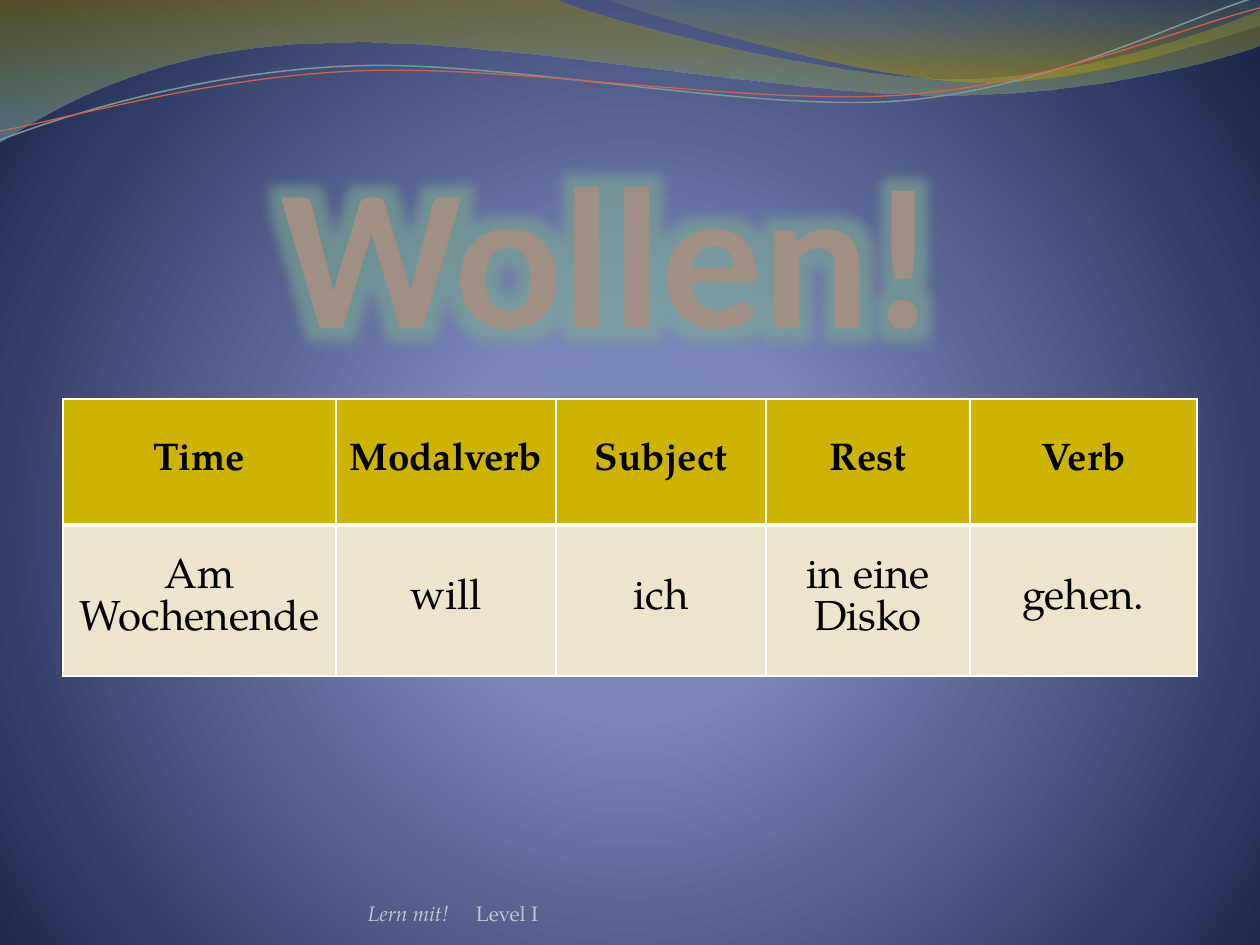
"""Build a German grammar slide on word order with the modal verb wollen."""
from dataclasses import dataclass

from lxml import etree
from pptx import Presentation
from pptx.dml.color import RGBColor
from pptx.enum.text import MSO_ANCHOR, MSO_AUTO_SIZE, PP_ALIGN
from pptx.oxml import parse_xml
from pptx.oxml.ns import nsdecls, qn
from pptx.util import Emu, Pt

CENTER, LEFT = PP_ALIGN.CENTER, PP_ALIGN.LEFT
BOTTOM, MIDDLE = MSO_ANCHOR.BOTTOM, MSO_ANCHOR.MIDDLE
NO_AUTOFIT = MSO_AUTO_SIZE.NONE
EMU_PER_PX = 914400 / 126
TITLE_ONLY = 5


@dataclass(frozen=True)
class Theme:
    """Colours, fonts and type sizes of the slide."""
    heading_font: str = "Calibri"
    body_font: str = "TeX Gyre Pagella"
    title: str = "9F8F85"
    glow: str = "7DAC92"
    footer: str = "BCC8CD"
    ink: str = "000000"
    rule: str = "FFFFFF"
    header_fill: str = "CCB400"
    body_fill: str = "ECE5CC"
    title_size: int = 115
    header_size: int = 22
    body_size: int = 24
    footer_size: int = 12


@dataclass(frozen=True)
class Stop:
    """One gradient stop, with position and opacity in percent."""
    position: int
    color: str
    opacity: int = 100


@dataclass(frozen=True)
class Wave:
    """An outline whose steps hold one point for a line or three for a curve."""
    start: tuple
    steps: tuple
    stops: tuple = ()
    line_color: str = ""
    line_width: float = 0


THEME = Theme()
LINEAR = '<a:lin ang="5400000" scaled="0"/>'
RADIAL = ('<a:path path="circle"><a:fillToRect l="10000" t="110000" '
          'r="10000" b="100000"/></a:path>')
BACKDROP = (Stop(0, "7A88C3"), Stop(25, "7A86B9"), Stop(100, "1B254B"))
WAVES = (
    Wave((0, 0), (
        ((554, -1),),
        ((600, 21), (837, 79), (955, 79)),
        ((1075, 79), (1207, 33), (1260, 11)),
        ((1261, 45),),
        ((1239, 55), (1096, 96), (940, 95)),
        ((784, 95), (481, 35), (324, 43)),
        ((163, 45), (58, 105), (-1, 142)),
    ), stops=(Stop(0, "978500", 45), Stop(100, "77A5A6", 55))),
    Wave((604, -1), (
        ((641, 14), (859, 78), (969, 82)),
        ((1079, 87), (1211, 40), (1260, 26)),
        ((1260, 0),),
    ), stops=(Stop(0, "648484", 30), Stop(80, "B49F00", 45))),
    Wave((0, 140), (
        ((60, 117), (199, 72), (349, 66)),
        ((498, 59), (747, 112), (898, 101)),
        ((1050, 89), (1182, 19), (1257, -3)),
    ), line_color="7C999A", line_width=0.85),
    Wave((0, 131), (
        ((59, 121), (207, 77), (357, 71)),
        ((508, 64), (752, 106), (903, 95)),
        ((1053, 84), (1186, 26), (1260, 8)),
    ), line_color="D16349", line_width=0.75),
)
COLUMN_WIDTHS = (273, 220, 210, 204, 227)
ROW_HEIGHTS = (126, 151)
SENTENCE = (
    ("Time", "Modalverb", "Subject", "Rest", "Verb"),
    ("Am Wochenende", "will", "ich", "in eine Disko", "gehen."),
)


def px(length: float) -> Emu:
    """Turn a length in px into EMU."""
    return Emu(round(length * EMU_PER_PX))


def fill_gradient(fill, element, stops: tuple, direction: str) -> None:
    """Give the fill found under element a gradient with opacity."""
    fill.gradient()
    default = next(element.iter(qn("a:gradFill")))
    marks = "".join(
        f'<a:gs pos="{stop.position * 1000}"><a:srgbClr val="{stop.color}">'
        f'<a:alpha val="{stop.opacity * 1000}"/></a:srgbClr></a:gs>'
        for stop in stops)
    gradient = parse_xml(f'<a:gradFill {nsdecls("a")} rotWithShape="1">'
                         f'<a:gsLst>{marks}</a:gsLst>{direction}</a:gradFill>')
    default.getparent().replace(default, gradient)


def bend_outline(shape, steps: tuple) -> None:
    """Join the line segments of each three-point step into one curve."""
    outline = next(shape.element.iter(qn("a:path")))
    segments = iter(outline.findall(qn("a:lnTo")))
    for step in steps:
        group = [next(segments) for _ in step]
        if len(group) == 3:
            curve = etree.Element(qn("a:cubicBezTo"))
            group[0].addprevious(curve)
            for segment in group:
                curve.append(segment[0])
                outline.remove(segment)


def draw_wave(slide, wave: Wave) -> None:
    """Draw a wave as a gradient area or as a thin line."""
    builder = slide.shapes.build_freeform(*map(px, wave.start))
    builder.add_line_segments(
        [(px(x), px(y)) for step in wave.steps for x, y in step], close=bool(wave.stops))
    shape = builder.convert_to_shape()
    bend_outline(shape, wave.steps)
    shape.shadow.inherit = False
    if wave.stops:
        fill_gradient(shape.fill, shape.element, wave.stops, LINEAR)
        shape.line.fill.background()
    else:
        shape.fill.background()
        shape.line.color.rgb = RGBColor.from_string(wave.line_color)
        shape.line.width = Pt(wave.line_width)


def add_span(para, text: str, *, size: int, color: str, font: str = THEME.body_font,
             bold: bool = False, italic: bool = False, align=LEFT):
    """Add formatted text to a paragraph and return its run."""
    para.alignment = align
    span = para.add_run()
    span.text = text
    span.font.name, span.font.size = font, Pt(size)
    span.font.bold, span.font.italic = bold, italic
    span.font.color.rgb = RGBColor.from_string(color)
    return span


def prepare_box(box, left: int, top: int, width: int, height: int):
    """Place a text shape without insets and return its first paragraph."""
    box.left, box.top, box.width, box.height = map(px, (left, top, width, height))
    frame = box.text_frame
    frame.word_wrap, frame.auto_size, frame.vertical_anchor = True, NO_AUTOFIT, BOTTOM
    frame.margin_left = frame.margin_right = frame.margin_top = frame.margin_bottom = 0
    return frame.paragraphs[0]


def add_glow(span, color: str, radius: int) -> None:
    """Put a soft glow around a run."""
    glow = parse_xml(
        f'<a:effectLst {nsdecls("a")}><a:glow rad="{px(radius)}"><a:srgbClr val="{color}">'
        '<a:alpha val="60000"/></a:srgbClr></a:glow></a:effectLst>')
    next(span._r.iter(qn("a:solidFill"))).addnext(glow)


def add_borders(cell, **widths: int) -> None:
    """Draw cell borders, given in points by side."""
    properties = cell._tc.get_or_add_tcPr()
    for side in "LRTB":
        line = etree.SubElement(properties, qn(f"a:ln{side}"), w=str(Pt(widths.get(side, 1))))
        fill = etree.SubElement(line, qn("a:solidFill"))
        etree.SubElement(fill, qn("a:srgbClr"), val=THEME.rule)


def draw_table(slide, left: int, top: int) -> None:
    """Draw the sentence table with its header row."""
    size = px(sum(COLUMN_WIDTHS)), px(sum(ROW_HEIGHTS))
    table = slide.shapes.add_table(len(ROW_HEIGHTS), len(COLUMN_WIDTHS),
                                   px(left), px(top), *size).table
    table.horz_banding = False
    for column, width in zip(table.columns, COLUMN_WIDTHS):
        column.width = px(width)
    for index, (row, height, words) in enumerate(zip(table.rows, ROW_HEIGHTS, SENTENCE)):
        row.height = px(height)
        header = index == 0
        for cell, word in zip(row.cells, words):
            add_borders(cell, **{"B" if header else "T": 3})
            cell.fill.solid()
            cell.fill.fore_color.rgb = RGBColor.from_string(
                THEME.header_fill if header else THEME.body_fill)
            cell.vertical_anchor = MIDDLE
            add_span(cell.text_frame.paragraphs[0], word, color=THEME.ink,
                     bold=header, align=CENTER,
                     size=THEME.header_size if header else THEME.body_size)


def main() -> None:
    """Build and save the deck."""
    deck = Presentation()
    deck.slide_width, deck.slide_height = px(1260), px(945)
    slide = deck.slides.add_slide(deck.slide_layouts[TITLE_ONLY])
    fill_gradient(slide.background.fill, slide.element, BACKDROP, RADIAL)
    for wave in WAVES:
        draw_wave(slide, wave)
    para = prepare_box(slide.shapes.title, 73, 136, 1071, 233)
    title = add_span(para, "Wollen!", size=THEME.title_size, color=THEME.title,
                     font=THEME.heading_font, bold=True, align=CENTER)
    add_glow(title, THEME.glow, 32)
    para = prepare_box(slide.shapes.add_textbox(0, 0, 0, 0), 368, 876, 462, 50)
    add_span(para, "Lern mit!\t", size=THEME.footer_size, color=THEME.footer, italic=True)
    add_span(para, "Level I", size=THEME.footer_size, color=THEME.footer)
    tabs = etree.SubElement(para._p.get_or_add_pPr(), qn("a:tabLst"))
    etree.SubElement(tabs, qn("a:tab"), pos=str(px(108)), algn="l")
    draw_table(slide, 63, 399)
    deck.save("out.pptx")


if __name__ == "__main__":
    main()
